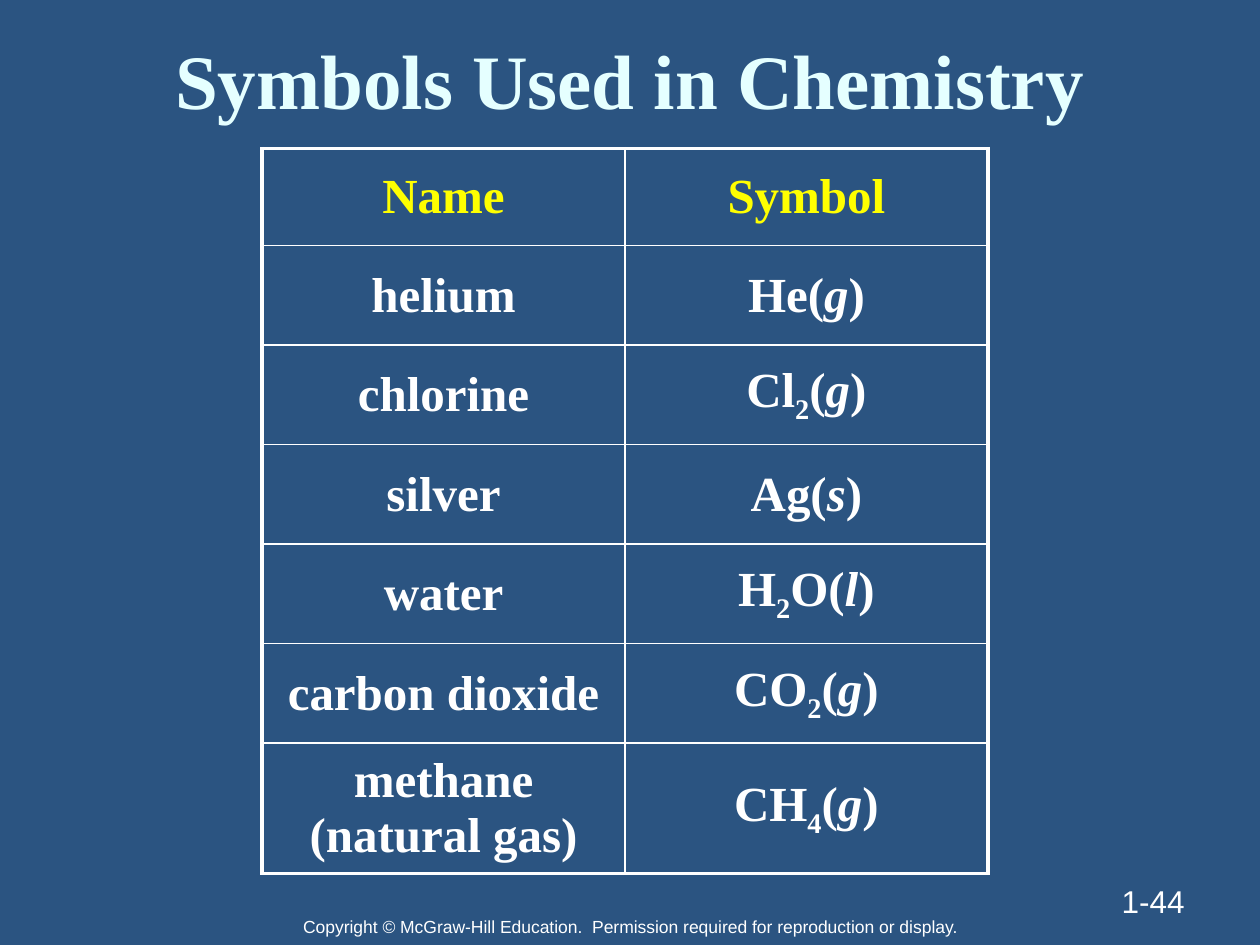
from itertools import groupby

from lxml import etree
from pptx import Presentation
from pptx.dml.color import RGBColor
from pptx.enum import text
from pptx.oxml import ns
from pptx.util import Inches, Pt

TITLE = "Symbols Used in Chemistry"
COPYRIGHT = ("Copyright © McGraw-Hill Education.  "
             "Permission required for reproduction or display.")
PAGE_NUMBER = "1-44"
HEADERS = ("Name", "Symbol")
SUBSTANCES = [  # name, formula, physical state
    ("helium", "He", "g"),
    ("chlorine", "Cl2", "g"),
    ("silver", "Ag", "s"),
    ("water", "H2O", "l"),
    ("carbon dioxide", "CO2", "g"),
    ("methane (natural gas)", "CH4", "g"),
]
ROW_HEIGHTS = [0.77] + [0.79] * 5 + [1.03]
COLUMN_WIDTH = 2.88
BLUE, WHITE, YELLOW, PALE = "2B5481", "FFFFFF", "FFFF00", "E5FFFF"
SERIF, SANS = "Times New Roman", "Arial"
CENTER, RIGHT = text.PP_ALIGN.CENTER, text.PP_ALIGN.RIGHT
MIDDLE, BOTTOM = text.MSO_ANCHOR.MIDDLE, text.MSO_ANCHOR.BOTTOM
OUTER, INNER = 2.25, 1


def paint(target, color):
    target.solid()
    target.fore_color.rgb = RGBColor.from_string(color)


def add_span(para, words, size, color, font=SERIF, bold=True, italic=False):
    span = para.add_run()
    span.text = words
    span.font.name, span.font.size = font, Pt(size)
    span.font.bold, span.font.italic = bold, italic
    paint(span.font.fill, color)
    return span


def add_formula(para, formula, state):
    """Write the formula with lowered digits and an italic state."""
    for lowered, letters in groupby(formula + "(", str.isdigit):
        span = add_span(para, "".join(letters), 28, WHITE)
        if lowered:
            span._r.get_or_add_rPr().set("baseline", "-25000")
    add_span(para, state, 28, WHITE, italic=True)
    add_span(para, ")", 28, WHITE)


def set_borders(cell, widths):
    properties = cell._tc.get_or_add_tcPr()
    for position, (side, width) in enumerate(widths.items()):
        line = etree.Element(ns.qn(f"a:ln{side}"), w=str(Pt(width)))
        fill = etree.SubElement(line, ns.qn("a:solidFill"))
        etree.SubElement(fill, ns.qn("a:srgbClr"), val=WHITE)
        properties.insert(position, line)


def add_label(page, place, words, size, align, anchor):
    frame = page.shapes.add_textbox(*map(Inches, place)).text_frame
    frame.word_wrap = True
    frame.vertical_anchor = anchor
    para = frame.paragraphs[0]
    para.alignment = align
    add_span(para, words, size, WHITE, font=SANS, bold=False)


def add_substances(page):
    row_count, column_count = len(ROW_HEIGHTS), len(HEADERS)
    table = page.shapes.add_table(
        row_count, column_count, Inches(2.08), Inches(1.18),
        Inches(COLUMN_WIDTH * column_count), Inches(sum(ROW_HEIGHTS))).table
    table.first_row = table.horz_banding = False
    for column in table.columns:
        column.width = Inches(COLUMN_WIDTH)
    for r, height in enumerate(ROW_HEIGHTS):
        table.rows[r].height = Inches(height)
        for c in range(column_count):
            cell = table.cell(r, c)
            cell.fill.background()
            cell.vertical_anchor = MIDDLE
            set_borders(cell, {
                "L": OUTER if c == 0 else INNER,
                "R": OUTER if c == column_count - 1 else INNER,
                "T": OUTER if r == 0 else INNER,
                "B": OUTER if r == row_count - 1 else INNER})
            para = cell.text_frame.paragraphs[0]
            para.alignment = CENTER
            if r == 0:
                add_span(para, HEADERS[c], 28, YELLOW)
            elif c == 0:
                add_span(para, SUBSTANCES[r - 1][0], 28, WHITE)
            else:
                add_formula(para, *SUBSTANCES[r - 1][1:])


def main():
    deck = Presentation()
    deck.slide_width, deck.slide_height = Inches(10), Inches(7.5)
    page = deck.slides.add_slide(deck.slide_layouts[5])
    paint(page.background.fill, BLUE)

    title = page.shapes.title
    title.left, title.top = Inches(0.5), Inches(0.25)
    title.width, title.height = Inches(9), Inches(0.75)
    frame = title.text_frame
    frame.auto_size = text.MSO_AUTO_SIZE.NONE
    frame.vertical_anchor = MIDDLE
    frame.paragraphs[0].alignment = CENTER
    add_span(frame.paragraphs[0], TITLE, 44, PALE)

    add_label(page, (0, 7.22, 10, 0.28), COPYRIGHT, 10, CENTER, text.MSO_ANCHOR.TOP)
    add_label(page, (7.17, 6.83, 2.33, 0.52), PAGE_NUMBER, 18, RIGHT, BOTTOM)
    add_substances(page)
    deck.save("out.pptx")


if __name__ == "__main__":
    main()
